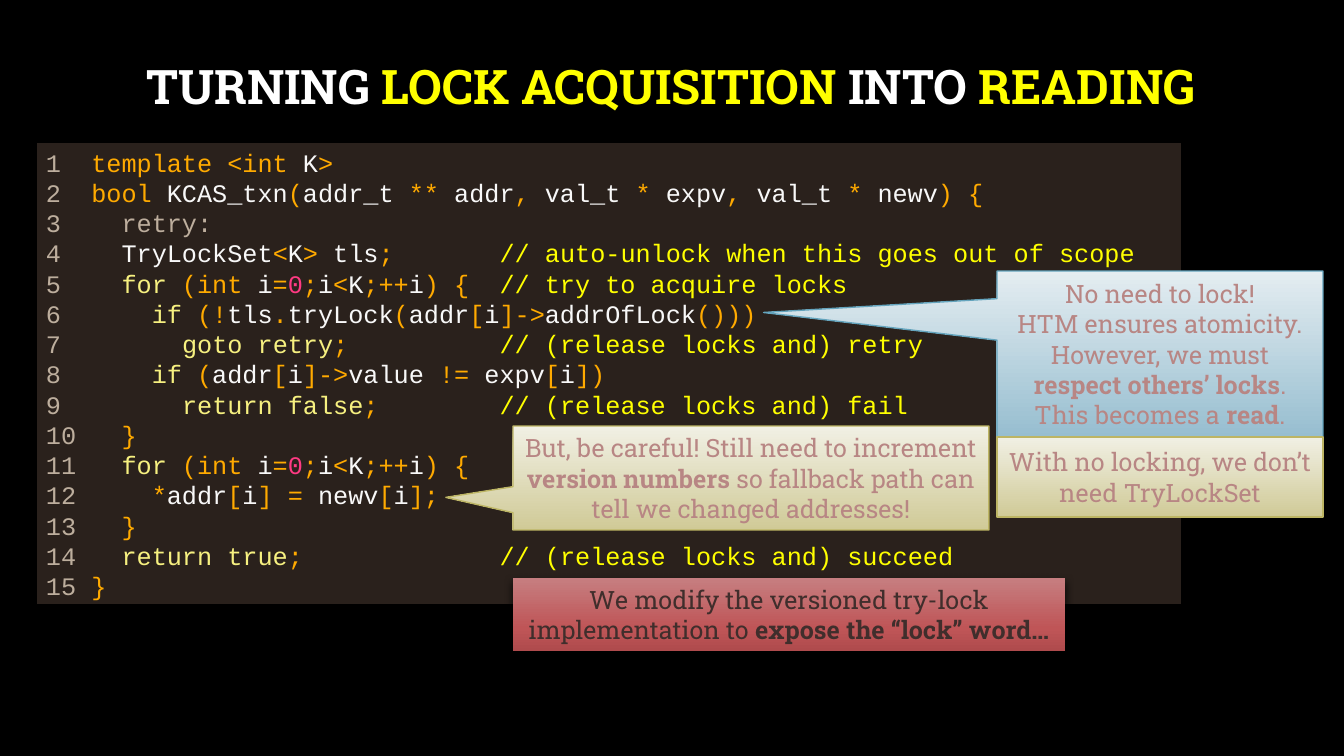
from copy import deepcopy
from itertools import groupby

from lxml.etree import SubElement
from pptx import Presentation
from pptx.dml.color import RGBColor
from pptx.enum.shapes import MSO_SHAPE
from pptx.enum.text import MSO_ANCHOR, MSO_AUTO_SIZE, PP_ALIGN
from pptx.oxml.ns import qn
from pptx.util import Pt

PX = 12192000 / 1344
SLAB, MONO = "Roboto Slab", "Courier New"
COLORS = {
    "black": "000000", "white": "FFFFFF", "yellow": "FFFF00",
    "panel": "2A211C", "plain": "BDAE9D", "name": "F8F8F8",
    "type": "FFAA00", "keyword": "F6F080", "number": "FF3A83",
    "rose": "B88684", "brown": "402E2C",
    "blue_line": "64A4BD", "olive_line": "BDB564",
}
BLUE = [(0, "E4EDF1"), (100, "97BED0")]
OLIVE = [(0, "F1F0E4"), (100, "D0CA97")]
RED = [(0, "C67E80"), (69, "BF5557"), (100, "AF4B4D")]

CODE = """\
template <int K>
bool KCAS_txn(addr_t ** addr, val_t * expv, val_t * newv) {
  retry:
  TryLockSet<K> tls;       // auto-unlock when this goes out of scope
  for (int i=0;i<K;++i) {  // try to acquire locks
    if (!tls.tryLock(addr[i]->addrOfLock()))
      goto retry;          // (release locks and) retry
    if (addr[i]->value != expv[i])
      return false;        // (release locks and) fail
  }
  for (int i=0;i<K;++i) {
    *addr[i] = newv[i];
  }
  return true;             // (release locks and) succeed
}"""
WORDS = {"retry:": "plain", "0": "number"}
WORDS.update(dict.fromkeys(["template", "bool", "int"], "type"))
WORDS.update(dict.fromkeys("for if goto retry return true false".split(), "keyword"))


def rgb(name):
    return RGBColor.from_string(COLORS.get(name, name))


def add_run(p, text, color=None, bold=None):
    r = p.add_run()
    r.text = text
    r.font.bold = bold
    if color:
        r.font.color.rgb = rgb(color)


prs = Presentation()
prs.slide_width, prs.slide_height = round(1344 * PX), round(756 * PX)
slide = prs.slides.add_slide(prs.slide_layouts[5])
slide.background.fill.solid()
slide.background.fill.fore_color.rgb = rgb("black")

# Title
title = slide.shapes.title
title.left, title.top, title.width, title.height = [round(v * PX) for v in (54, 37, 1234, 104)]
tf = title.text_frame
tf.auto_size = MSO_AUTO_SIZE.NONE
tf.vertical_anchor = MSO_ANCHOR.MIDDLE
p = tf.paragraphs[0]
p.alignment, p.line_spacing = PP_ALIGN.CENTER, 0.9
p.font.name, p.font.size, p.font.bold = SLAB, Pt(34), True
for text, color in [("TURNING ", "white"), ("LOCK ACQUISITION", "yellow"),
                    (" INTO ", "white"), ("READING", "yellow")]:
    add_run(p, text, color)

# Code panel
sp = slide.shapes.add_shape(MSO_SHAPE.RECTANGLE, *[round(v * PX) for v in (36, 142, 1146, 463)])
sp.shadow.inherit = False
sp.fill.solid()
sp.fill.fore_color.rgb = rgb("panel")
sp.line.color.rgb = rgb("black")
sp.line.width = Pt(1.5)
tf = sp.text_frame
tf.word_wrap = True
tf.vertical_anchor = MSO_ANCHOR.TOP

# Numbered code lines, coloured by kind of token
for n, line in enumerate(CODE.split("\n"), 1):
    p = tf.paragraphs[0] if n == 1 else tf.add_paragraph()
    p.alignment, p.line_spacing = PP_ALIGN.LEFT, Pt(21.6)
    p.font.name, p.font.size = MONO, Pt(18)
    add_run(p, f"{n:<3}", "plain")
    code, slashes, comment = line.partition("//")
    for kind, chars in groupby(code, lambda c: "space" if c == " " else
                               "word" if c.isalnum() or c in "_:" else "symbol"):
        token = "".join(chars)
        color = {"space": "plain", "symbol": "type"}.get(kind) or WORDS.get(token, "name")
        add_run(p, token, color)
    if comment:
        add_run(p, slashes + comment, "yellow")

# Callouts and notes; * switches bold on and off
CALLOUT, NOTE = MSO_SHAPE.RECTANGULAR_CALLOUT, MSO_SHAPE.FLOWCHART_PROCESS
notes = [
    (CALLOUT, (997, 271, 326, 166), (-1.216, -0.25), BLUE, "blue_line", "rose",
     ["No need to lock!\vHTM ensures atomicity.\vHowever, we must *respect others’ locks*.",
      "This becomes a *read*."]),
    (NOTE, (997, 437, 326, 80), (), OLIVE, "olive_line", "rose",
     ["With no locking, we don’t need TryLockSet"]),
    (CALLOUT, (513, 426, 476, 104), (-0.641, 0.186), OLIVE, "olive_line", "rose",
     ["But, be careful! Still need to increment *version numbers* "
      "so fallback path can tell we changed addresses!"]),
    (NOTE, (513, 578, 552, 73), (), RED, None, "brown",
     ["We modify the versioned try-lock implementation to *expose the “lock” word…*"]),
]
for shape, box, tip, stops, line_color, text_color, paragraphs in notes:
    sp = slide.shapes.add_shape(shape, *[round(v * PX) for v in box])
    sp.shadow.inherit = False
    for i, value in enumerate(tip):
        sp.adjustments[i] = value

    # Gradient from top to bottom
    sp.fill.gradient()
    sp.fill.gradient_angle = 270
    gs_list = sp._element.spPr.find(".//" + qn("a:gsLst"))
    for _ in stops[2:]:
        gs_list.append(deepcopy(gs_list[0]))
    for stop, (position, color) in zip(sp.fill.gradient_stops, stops):
        stop.position = position / 100
        stop.color.rgb = rgb(color)

    # Outline, or a soft shadow below
    if line_color:
        sp.line.color.rgb = rgb(line_color)
        sp.line.width = Pt(1)
    else:
        sp.line.fill.background()
        effects = sp._element.spPr.find(qn("a:effectLst"))
        shadow = SubElement(effects, qn("a:outerShdw"), blurRad=str(Pt(6)),
                            dist=str(Pt(3)), dir="5400000", rotWithShape="0")
        black = SubElement(shadow, qn("a:srgbClr"), val=COLORS["black"])
        SubElement(black, qn("a:alpha"), val="76000")

    tf = sp.text_frame
    tf.word_wrap = True
    tf.vertical_anchor = MSO_ANCHOR.MIDDLE
    for i, text in enumerate(paragraphs):
        p = tf.paragraphs[0] if i == 0 else tf.add_paragraph()
        p.alignment, p.line_spacing = PP_ALIGN.CENTER, Pt(21.6)
        p.font.name, p.font.size = SLAB, Pt(18)
        p.font.color.rgb = rgb(text_color)
        for j, row in enumerate(text.split("\v")):
            if j:
                p.add_line_break()
            for k, part in enumerate(row.split("*")):
                if part:
                    add_run(p, part, bold=k % 2 == 1)

prs.save("out.pptx")
